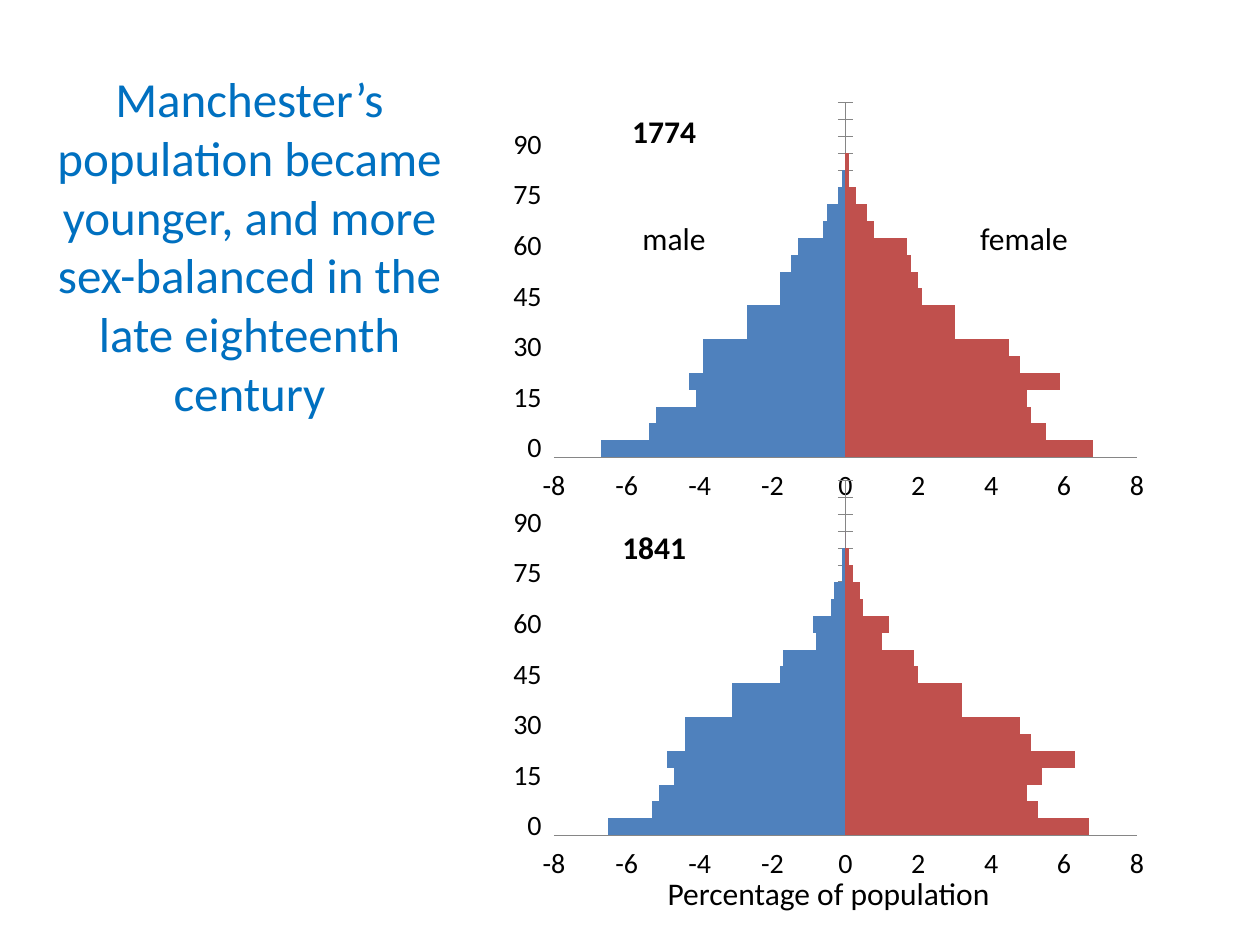
import pptx
import pptx.chart.data
import pptx.dml.color
import pptx.enum.chart
import pptx.enum.text
import pptx.oxml
import pptx.oxml.ns
import pptx.util
from dataclasses import dataclass

Pt = pptx.util.Pt
RGB = pptx.dml.color.RGBColor.from_string


@dataclass(frozen=True)
class Theme:
    font: str = "Calibri"
    title: str = "0070C0"
    text: str = "000000"
    male: str = "4F81BD"
    female: str = "C0504D"
    axis: str = "868686"
    title_size: int = 28
    label_size: int = 18
    axis_size: int = 16


class SlideBuilder:
    def __init__(self, slide, theme):
        self.s = slide
        self.theme = theme

    def style(self, font, size, color, bold=False):
        font.name = self.theme.font
        font.size = Pt(size)
        font.bold = bold
        font.color.rgb = RGB(color)

    def title(self, text, left, top, width, height):
        sp = self.s.shapes.title
        sp.left, sp.top, sp.width, sp.height = map(Pt, (left, top, width, height))
        tf = sp.text_frame
        tf.auto_size = pptx.enum.text.MSO_AUTO_SIZE.NONE
        tf.vertical_anchor = pptx.enum.text.MSO_ANCHOR.MIDDLE
        p = tf.paragraphs[0]
        p.alignment = pptx.enum.text.PP_ALIGN.CENTER
        r = p.add_run()
        r.text = text
        self.style(r.font, self.theme.title_size, self.theme.title)

    def label(self, text, left, top, width, bold=False):
        sp = self.s.shapes.add_textbox(Pt(left), Pt(top), Pt(width), Pt(29))
        tf = sp.text_frame
        tf.word_wrap = False
        tf.auto_size = pptx.enum.text.MSO_AUTO_SIZE.SHAPE_TO_FIT_TEXT
        r = tf.paragraphs[0].add_run()
        r.text = text
        self.style(r.font, self.theme.label_size, self.theme.text, bold)

    def pyramid(self, ages, male, female, left, top, width, height):
        enum = pptx.enum.chart
        data = pptx.chart.data.CategoryChartData()
        data.categories = ages
        for name, values in (("Series 1", male), ("Series 2", female)):
            data.add_series(name, values + [None] * (len(ages) - len(values)))
        chart = self.s.shapes.add_chart(
            enum.XL_CHART_TYPE.BAR_CLUSTERED,
            Pt(left), Pt(top), Pt(width), Pt(height), data).chart
        chart.has_legend = False
        chart.has_title = False
        self.style(chart.font, self.theme.axis_size, self.theme.text)

        # Bars: both sexes share a row, with no gaps between ages
        plot = chart.plots[0]
        plot.vary_by_categories = False
        plot.gap_width = 0
        plot.overlap = 100
        for series, color in zip(plot.series, (self.theme.male, self.theme.female)):
            series.invert_if_negative = False
            series.format.fill.solid()
            series.format.fill.fore_color.rgb = RGB(color)

        # Axes
        ages_axis, share_axis = chart.category_axis, chart.value_axis
        for axis in (ages_axis, share_axis):
            axis.has_major_gridlines = False
            axis.tick_label_position = enum.XL_TICK_LABEL_POSITION.LOW
            axis.minor_tick_mark = enum.XL_TICK_MARK.NONE
            axis.format.line.color.rgb = RGB(self.theme.axis)
            axis.format.line.width = Pt(0.75)
        ages_axis.major_tick_mark = enum.XL_TICK_MARK.CROSS
        share_axis.major_tick_mark = enum.XL_TICK_MARK.NONE
        share_axis.minimum_scale = -8
        share_axis.maximum_scale = 8
        share_axis.major_unit = 2
        share_axis.tick_labels.number_format = "0"
        share_axis.tick_labels.number_format_is_linked = False
        self.label_every(ages_axis, 3)
        self.place_plot(chart, x=0.08, y=0.02, w=0.89, h=0.85)

    def label_every(self, axis, step):
        ns = pptx.oxml.ns
        skip = pptx.oxml.parse_xml(
            f'<c:tickLblSkip {ns.nsdecls("c")} val="{step}"/>')
        axis._element.find(ns.qn("c:noMultiLvlLbl")).addprevious(skip)

    def place_plot(self, chart, **box):
        ns = pptx.oxml.ns
        area = chart._chartSpace.find(".//" + ns.qn("c:plotArea"))
        for old in area.findall(ns.qn("c:layout")):
            area.remove(old)
        sizes = "".join(f'<c:{k} val="{v}"/>' for k, v in box.items())
        area.insert(0, pptx.oxml.parse_xml(
            f'<c:layout {ns.nsdecls("c")}><c:manualLayout>'
            '<c:layoutTarget val="inner"/><c:xMode val="edge"/>'
            f'<c:yMode val="edge"/>{sizes}</c:manualLayout></c:layout>'))


AGES = [str(age) for age in range(0, 101, 5)]
# Percentage of population by age group, men as negative values
MALE_1774 = [-6.7, -5.4, -5.2, -4.1, -4.3, -3.9, -3.9, -2.7, -2.7,
             -1.8, -1.8, -1.5, -1.3, -0.6, -0.5, -0.2, -0.1, 0]
FEMALE_1774 = [6.8, 5.5, 5.1, 5, 5.9, 4.8, 4.5, 3, 3,
               2.1, 2, 1.8, 1.7, 0.8, 0.6, 0.3, 0.1, 0.1]
MALE_1841 = [-6.5, -5.3, -5.1, -4.7, -4.9, -4.4, -4.4, -3.1, -3.1,
             -1.8, -1.7, -0.8, -0.9, -0.4, -0.3, -0.1, -0.1, 0]
FEMALE_1841 = [6.7, 5.3, 5, 5.4, 6.3, 5.1, 4.8, 3.2, 3.2,
               2, 1.9, 1, 1.2, 0.5, 0.4, 0.2, 0.1, 0]


def main():
    prs = pptx.Presentation()
    prs.slide_width, prs.slide_height = Pt(720), Pt(540)
    s = prs.slides.add_slide(prs.slide_layouts[5])
    b = SlideBuilder(s, Theme())

    b.title("Manchester’s population became younger, and more "
            "sex-balanced in the late eighteenth century", 14.4, 95, 256.3, 90)

    # Population pyramids, one above the other
    for top, male, female in ((54, MALE_1774, FEMALE_1774),
                              (270, MALE_1841, FEMALE_1841)):
        b.pyramid(AGES, male, female, 286.5, top, 374.4, 238.3)

    # Chart labels
    b.label("Percentage of population", 374.4, 496, 201)
    b.label("male", 360, 121.7, 51)
    b.label("female", 553, 121.7, 65.5)
    b.label("1774", 354.2, 60.5, 51, bold=True)
    b.label("1841", 348.5, 298, 51, bold=True)

    prs.save("out.pptx")


if __name__ == "__main__":
    main()
